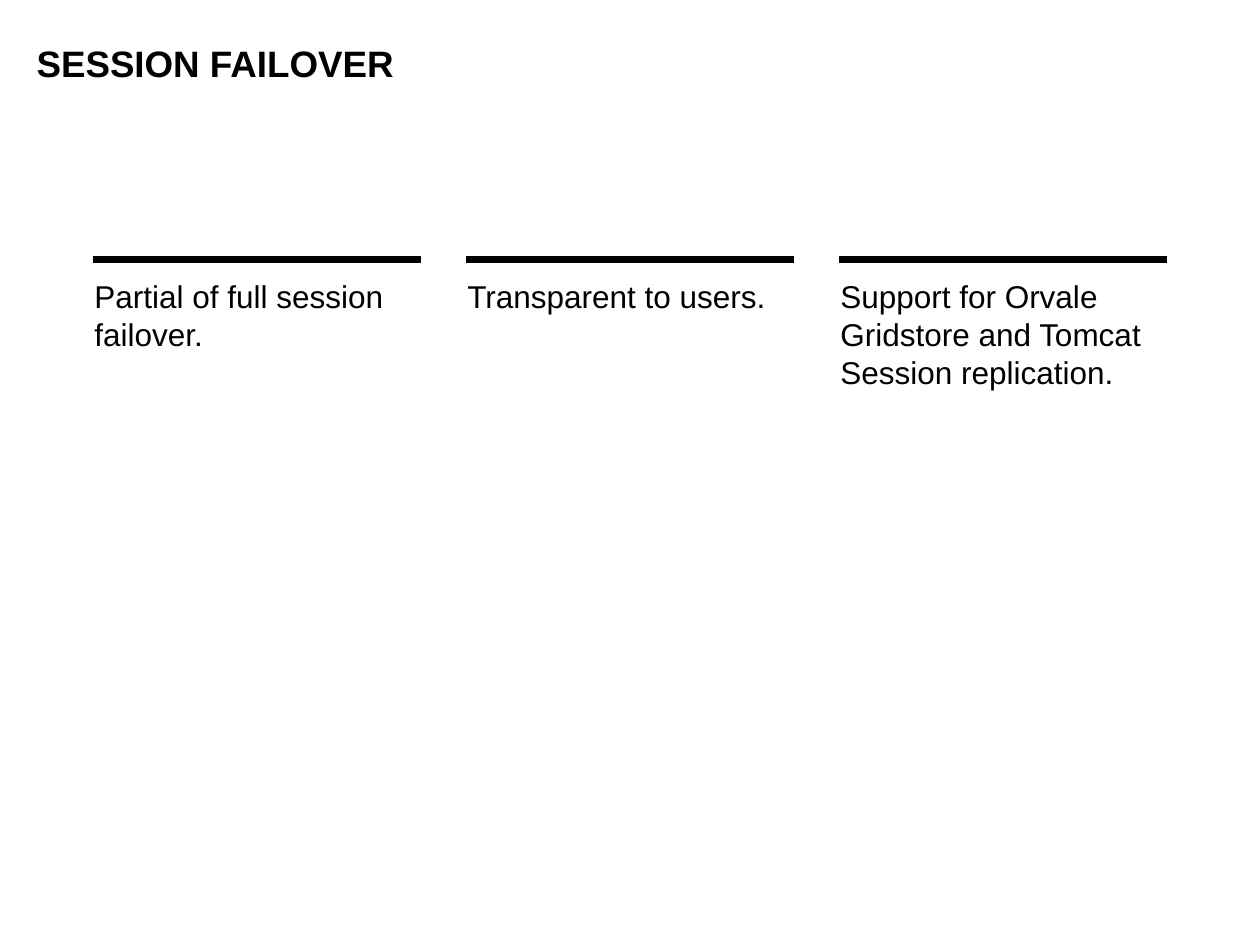
from lxml.etree import SubElement
from pptx import Presentation
from pptx.dml.color import RGBColor
from pptx.enum.shapes import MSO_CONNECTOR
from pptx.enum.text import MSO_ANCHOR
from pptx.oxml.ns import qn
from pptx.util import Inches, Pt

BLACK = RGBColor(0x00, 0x00, 0x00)
FONT = "Arial"
GRID_LEFT, GRID_TOP = 0.74, 2.06
PITCH, COLUMN_WIDTH = 2.96, 2.6
TEXT_INDENT, TEXT_DROP = 0.01, 0.12
LINE_HEIGHT, TEXT_PADDING = 0.3, 0.09
COLUMNS = [
    ("Partial of full session failover.", 2),
    ("Transparent to users.", 1),
    ("Support for Orvale Gridstore and Tomcat Session replication.", 4),
]


def add_text(shapes, text, box, margins, size, bold=False, anchor=MSO_ANCHOR.TOP):
    s = shapes.add_textbox(*map(Inches, box))
    tf = s.text_frame
    tf.word_wrap = True
    tf.vertical_anchor = anchor
    tf.margin_left, tf.margin_top, tf.margin_right, tf.margin_bottom = map(Inches, margins)
    p = tf.paragraphs[0]
    p.text = text
    p.font.name = FONT
    p.font.size = Pt(size)
    p.font.bold = bold
    p.font.color.rgb = BLACK
    return p


def add_rule(shapes, left, top, width):
    x1, x2, y = Inches(left), Inches(left + width), Inches(top)
    s = shapes.add_connector(MSO_CONNECTOR.STRAIGHT, x1, y, x2, y)
    s.line.color.rgb = BLACK
    s.line.width = Pt(4.5)
    SubElement(s._element.spPr, qn("a:effectLst"))


def add_column(slide, index, text, lines):
    left = GRID_LEFT + index * PITCH
    shapes = slide.shapes.add_group_shape().shapes
    box = (left + TEXT_INDENT, GRID_TOP + TEXT_DROP,
           COLUMN_WIDTH, lines * LINE_HEIGHT + TEXT_PADDING)
    add_text(shapes, text, box, (0, 0.02, 0.13, 0.07), 18)
    add_rule(shapes, left, GRID_TOP, COLUMN_WIDTH)


def main():
    prs = Presentation()
    prs.slide_width, prs.slide_height = Inches(10), Inches(7.5)
    slide = prs.slides.add_slide(prs.slide_layouts[6])
    title = add_text(slide.shapes, "SESSION FAILOVER", (0.29, 0.31, 8.42, 0.42),
                     (0, 0.05, 0, 0.05), 21, True, MSO_ANCHOR.MIDDLE)
    title.line_spacing = 0.9
    for index, (text, lines) in enumerate(COLUMNS):
        add_column(slide, index, text, lines)
    prs.save("out.pptx")


if __name__ == "__main__":
    main()
